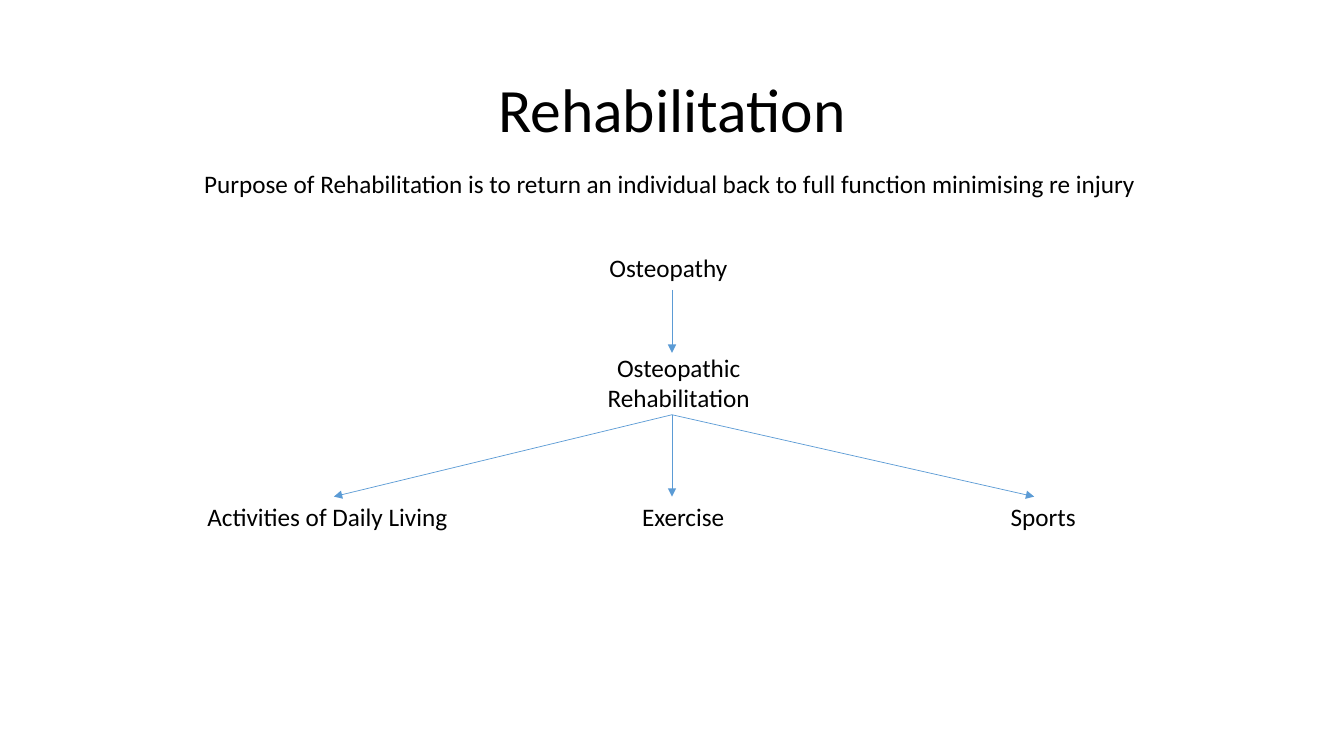
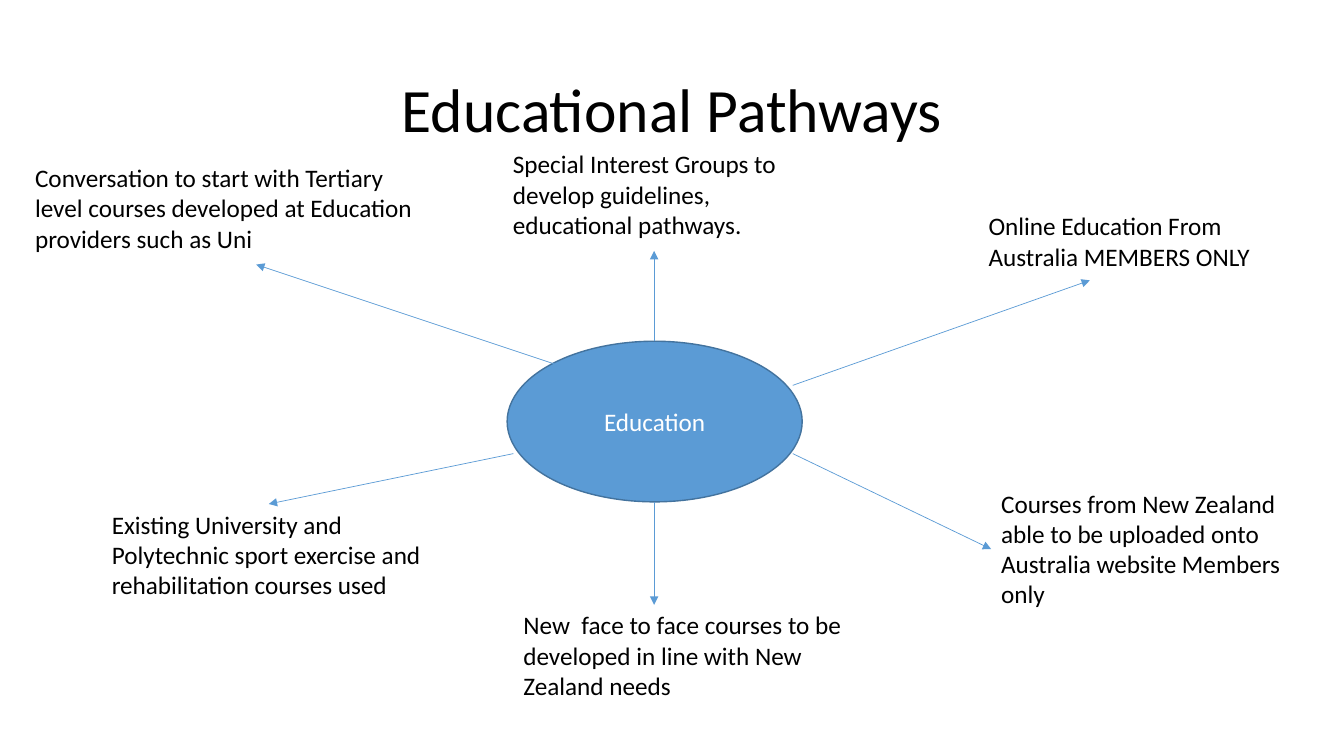
from dataclasses import dataclass

from lxml import etree
from pptx import Presentation
from pptx.dml.color import RGBColor
from pptx.enum.shapes import MSO_CONNECTOR, MSO_SHAPE
from pptx.enum.text import MSO_ANCHOR, MSO_AUTO_SIZE, PP_ALIGN
from pptx.oxml.ns import qn
from pptx.util import Emu, Pt

LEFT, CENTER = PP_ALIGN.LEFT, PP_ALIGN.CENTER
TOP, MIDDLE = MSO_ANCHOR.TOP, MSO_ANCHOR.MIDDLE
FIXED = MSO_AUTO_SIZE.NONE
OVAL, STRAIGHT = MSO_SHAPE.OVAL, MSO_CONNECTOR.STRAIGHT
SCALE = 9525  # EMU in one px, 96 px to the inch
TITLE_ONLY = 5


@dataclass(frozen=True)
class Theme:
    font: str = "Calibri"
    ink: str = "000000"
    paper: str = "FFFFFF"
    blue: str = "5B9BD5"
    edge: str = "43739E"
    head: int = 44
    body: int = 18
    thin: float = 0.5
    rim: int = 1


THEME = Theme()


def px(*nums):
    return [Emu(num * SCALE) for num in nums]


def write(frame, text, size=THEME.body, color=THEME.ink, align=LEFT,
          anchor=TOP, lead=1.0):
    frame.word_wrap = True
    frame.auto_size = FIXED
    frame.vertical_anchor = anchor
    para = frame.paragraphs[0]
    para.alignment = align
    para.line_spacing = lead
    run = para.add_run()
    run.text = text
    run.font.name = THEME.font
    run.font.size = Pt(size)
    run.font.color.rgb = RGBColor.from_string(color)


class Deck:
    def __init__(self, theme):
        self.theme = theme
        self.show = Presentation()
        self.show.slide_width, self.show.slide_height = px(1280, 720)
        self.slide = None

    def page(self, title):
        layout = self.show.slide_layouts[TITLE_ONLY]
        self.slide = self.show.slides.add_slide(layout)
        head = self.slide.shapes.title
        head.left, head.top, head.width, head.height = px(88, 38, 1104, 139)
        write(head.text_frame, title, size=self.theme.head, align=CENTER,
              anchor=MIDDLE, lead=0.9)

    def label(self, text, box, **style):
        shape = self.slide.shapes.add_textbox(*px(*box))
        write(shape.text_frame, text, **style)

    def oval(self, text, box):
        shape = self.slide.shapes.add_shape(OVAL, *px(*box))
        shape.shadow.inherit = False
        shape.fill.solid()
        shape.fill.fore_color.rgb = RGBColor.from_string(self.theme.blue)
        shape.line.color.rgb = RGBColor.from_string(self.theme.edge)
        shape.line.width = Pt(self.theme.rim)
        write(shape.text_frame, text, color=self.theme.paper, align=CENTER,
              anchor=MIDDLE)

    def arrow(self, start, end):
        link = self.slide.shapes.add_connector(STRAIGHT, *px(*start, *end))
        link.line.color.rgb = RGBColor.from_string(self.theme.blue)
        link.line.width = Pt(self.theme.thin)
        stroke = link.line._get_or_add_ln()
        etree.SubElement(stroke, qn("a:tailEnd"), type="triangle")
        etree.SubElement(stroke.getparent(), qn("a:effectLst"))

    def save(self):
        self.show.save("out.pptx")


def rehab(deck):
    deck.page("Rehabilitation")
    deck.label("Purpose of Rehabilitation is to return an individual back to "
               "full function minimising re injury", (185, 156, 1052, 38))

    # Trunk of the tree
    deck.label("Osteopathy", (571, 236, 241, 38))
    deck.label("Osteopathic Rehabilitation", (522, 331, 249, 68),
               align=CENTER)
    deck.arrow((640, 276), (640, 336))

    # Branches: text, left, width, arrow tip
    low = 473
    for text, left, width, tip in (
        ("Activities of Daily Living", 188, 260, 318),
        ("Exercise", 602, 259, 640),
        ("Sports", 953, 306, 985),
    ):
        deck.label(text, (left, low, width, 38))
        deck.arrow((640, 395), (tip, low))


def paths(deck):
    deck.page("Educational Pathways")
    deck.oval("Education", (483, 325, 281, 153))

    # Spokes: text, box, arrow start, arrow tip
    for text, box, start, tip in (
        ("Conversation to start with Tertiary level courses developed at "
         "Education providers such as Uni",
         (24, 150, 393, 97), (556, 356), (244, 252)),
        ("Special Interest Groups to develop guidelines, educational "
         "pathways.",
         (479, 137, 276, 97), (623, 325), (623, 239)),
        ("Online Education From Australia MEMBERS ONLY",
         (932, 196, 278, 68), (755, 367), (1038, 267)),
        ("Courses from New Zealand able to be uploaded onto Australia "
         "website Members only",
         (944, 460, 298, 126), (755, 432), (944, 523)),
        ("New  face to face courses to be developed in line with New "
         "Zealand needs",
         (489, 576, 365, 97), (623, 478), (623, 576)),
        ("Existing University and Polytechnic sport exercise and "
         "rehabilitation courses used",
         (97, 480, 320, 97), (489, 432), (256, 480)),
    ):
        deck.label(text, box)
        deck.arrow(start, tip)


def main():
    deck = Deck(THEME)
    rehab(deck)
    paths(deck)
    deck.save()


if __name__ == "__main__":
    main()
